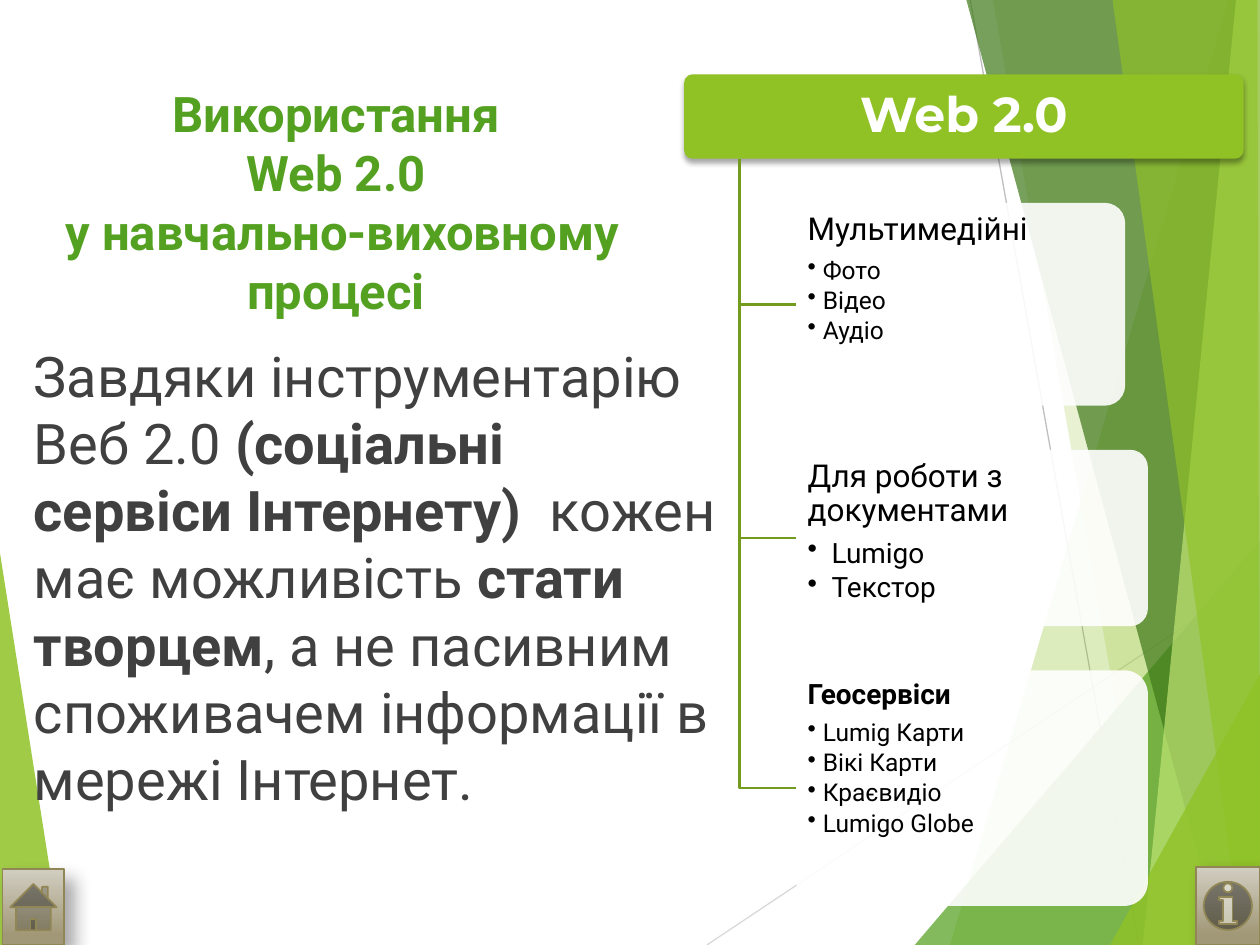
import pptx
import pptx.dml.color
import pptx.enum.shapes
import pptx.enum.text
import pptx.oxml.ns
import pptx.util
from lxml import etree

# The slide is a grid of 10 columns by 7.5 rows
WIDTH, HEIGHT = pptx.util.Inches(10), pptx.util.Inches(7.5)
COLUMNS, ROWS = 10, 7.5

GREEN, DARK_GREEN, FOREST, LIME = "90C226", "54A021", "3F7819", "C0E474"
BRANCH_GREEN, WHITE, BLACK, GREY = "739B1E", "FFFFFF", "000000", "404040"

SHAPES = pptx.enum.shapes.MSO_SHAPE
ANCHORS = pptx.enum.text.MSO_ANCHOR
ALIGNS = pptx.enum.text.PP_ALIGN

# Background bands: outline, colour, opacity in percent
LEFT_BAND = ([(0, 4.39), (0.49, 7.5), (0, 7.5)], GREEN, 85)
RIGHT_BANDS = [
    ([(9.75, 0), (7.54, 7.5), (10, 7.5), (10, 0)], GREEN, 30),
    ([(7.88, 0), (9.19, 7.5), (10, 7.5), (10, 0)], GREEN, 20),
    ([(7.26, 7.5), (10, 4.29), (10, 7.5)], DARK_GREEN, 72),
    ([(7.67, 0), (9.7, 7.5), (10, 7.5), (10, 0)], FOREST, 70),
    ([(9.81, 0), (9.07, 7.5), (10, 7.5), (10, 0)], LIME, 70),
    ([(8.83, 0), (9.86, 7.5), (10, 7.5), (9.98, 0)], GREEN, 65),
    ([(8.81, 7.5), (10, 5.35), (10, 7.5)], GREEN, 80),
]

# Service groups: heading, size, bold, items, item size, indent, width, height
SERVICES = [
    ("Мультимедійні", 18, False, ["Фото", "Відео", "Аудіо"], 14, 0.12, 2.61, 1.61),
    ("Для роботи з документами", 18, False, ["Lumigo", "Текстор"], 16, 0.19, 2.79, 1.4),
    ("Геосервіси", 16, True,
     ["Lumig Карти", "Вікі Карти", "Краєвидіо", "Lumigo Globe"], 14, 0.12, 2.79, 1.87),
]
TRUNK, CARD_LEFT, CARD_GAP = 5.87, 6.32, 0.35


def col(x):
    return round(WIDTH * x / COLUMNS)


def row(y):
    return round(HEIGHT * y / ROWS)


def box(left, top, width, height):
    return col(left), row(top), col(width), row(height)


def color(hex_code):
    return pptx.dml.color.RGBColor.from_string(hex_code)


def add_child(parent, tag, **attributes):
    child = etree.SubElement(parent, pptx.oxml.ns.qn(tag))
    for key, value in attributes.items():
        child.set(key, str(value))
    return child


def paint(shape, fill, opacity=100):
    shape.shadow.inherit = False
    shape.fill.solid()
    shape.fill.fore_color.rgb = color(fill)
    if opacity < 100:
        tint = shape._element.spPr.find(".//" + pptx.oxml.ns.qn("a:srgbClr"))
        add_child(tint, "a:alpha", val=opacity * 1000)
    shape.line.fill.background()


def cast_shadow(shape, blur, distance, angle):
    shape.shadow.inherit = False
    effects = shape._element.spPr.find(pptx.oxml.ns.qn("a:effectLst"))
    shadow = add_child(effects, "a:outerShdw", blurRad=pptx.util.Pt(blur),
                       dist=pptx.util.Pt(distance), dir=angle * 60000, rotWithShape=0)
    add_child(add_child(shadow, "a:srgbClr", val=BLACK), "a:alpha", val=35000)


def add_outline(slide, points, close):
    corners = [(col(x), row(y)) for x, y in points]
    builder = slide.shapes.build_freeform(*corners[0], scale=1.0)
    builder.add_line_segments(corners[1:], close=close)
    return builder.convert_to_shape()


def add_band(slide, points, fill, opacity):
    paint(add_outline(slide, points, True), fill, opacity)


def add_ray(slide, start, end, stroke):
    ray = slide.shapes.add_connector(pptx.enum.shapes.MSO_CONNECTOR.STRAIGHT,
                                     col(start[0]), row(start[1]), col(end[0]), row(end[1]))
    ray.line.color.rgb = color(stroke)
    ray.line.width = pptx.util.Pt(0.75)
    add_child(ray._element.spPr, "a:effectLst")


def add_branch(slide, top, middle):
    branch = add_outline(slide, [(TRUNK, top), (TRUNK, middle), (CARD_LEFT, middle)], False)
    branch.shadow.inherit = False
    branch.fill.background()
    branch.line.color.rgb = color(BRANCH_GREEN)
    branch.line.width = pptx.util.Pt(1.5)


def add_panel(slide, place, fill, opacity=100):
    panel = slide.shapes.add_shape(SHAPES.ROUNDED_RECTANGLE, *box(*place))
    panel.adjustments[0] = 0.1
    paint(panel, fill, opacity)
    return panel


def add_button(slide, kind, place):
    button = slide.shapes.add_shape(kind, *box(*place))
    button.fill.gradient()
    button.fill.gradient_angle = 270
    for stop, shade, position in zip(button.fill.gradient_stops, ("D1CDC0", "A19877"), (0, 0.88)):
        stop.color.rgb = color(shade)
        stop.position = position
    button.line.color.rgb = color("918655")
    button.line.width = pptx.util.Pt(1)
    cast_shadow(button, 10.2, 8, 45)


def add_text_area(slide, place, anchor=ANCHORS.TOP, insets=(0.1, 0.05)):
    frame = slide.shapes.add_textbox(*box(*place)).text_frame
    frame.word_wrap = True
    frame.vertical_anchor = anchor
    frame.margin_left = frame.margin_right = col(insets[0])
    frame.margin_top = frame.margin_bottom = row(insets[1])
    return frame


def add_run(paragraph, words, size, ink, bold=False, font="Roboto"):
    run = paragraph.add_run()
    run.text = words
    run.font.name = font
    run.font.size = pptx.util.Pt(size)
    run.font.bold = bold
    run.font.color.rgb = color(ink)


def space(paragraph, size, share):
    paragraph.line_spacing = 0.9
    paragraph.space_after = pptx.util.Pt(round(size * share, 1))


def add_item(frame, words, size, indent):
    item = frame.add_paragraph()
    item.level = 1
    space(item, size, 0.15)
    settings = item._p.get_or_add_pPr()
    settings.set("marL", str(col(indent)))
    settings.set("indent", str(-col(indent)))
    add_child(settings, "a:buChar", char="•")
    add_run(item, words, size, BLACK)


def add_service(slide, top, service):
    heading, heading_size, bold, items, item_size, indent, width, height = service
    add_panel(slide, (CARD_LEFT, top, width, height), WHITE, 90)
    frame = add_text_area(slide, (CARD_LEFT + 0.05, top + 0.05, width - 0.1, height - 0.1),
                          insets=(0.04, 0.03))
    space(frame.paragraphs[0], heading_size, 0.35)
    add_run(frame.paragraphs[0], heading, heading_size, BLACK, bold)
    for words in items:
        add_item(frame, words, item_size, indent)


def add_title(slide):
    title = add_text_area(slide, (0.02, 0.7, 5.39, 1.88), ANCHORS.BOTTOM).paragraphs[0]
    title.alignment = ALIGNS.CENTER
    lines = ["Використання ", "Web 2.0 ", "у навчально-виховному процесі "]
    for number, words in enumerate(lines):
        if number:
            title.add_line_break()
        add_run(title, words, 28, DARK_GREEN, True)


def add_statement(slide):
    statement = add_text_area(slide, (0.02, 2.66, 5.77, 4.36)).paragraphs[0]
    statement._p.get_or_add_pPr().set("marL", str(col(0.15)))
    for words, bold in [("Завдяки інструментарію Веб 2.0 ", False),
                        ("(соціальні сервіси Інтернету)  ", True),
                        ("кожен має можливість ", False),
                        ("стати творцем", True),
                        (", а не пасивним споживачем інформації в мережі Інтернет.", False)]:
        add_run(statement, words, 32, GREY, bold)


def add_service_tree(slide):
    left, top, width, height = 5.43, 0.59, 4.44, 0.67
    root = add_panel(slide, (left, top, width, height), GREEN)
    cast_shadow(root, 3, 2, 90)
    label = add_text_area(slide, (left + 0.02, top + 0.02, width - 0.04, height - 0.04),
                          ANCHORS.MIDDLE, (0.06, 0.04)).paragraphs[0]
    label.alignment = ALIGNS.CENTER
    space(label, 28, 0.35)
    add_run(label, "Web 2.0", 28, WHITE, True, "Montserrat")
    root_bottom = top + height
    card_top = root_bottom + CARD_GAP
    for service in SERVICES:
        card_height = service[-1]
        add_branch(slide, root_bottom, card_top + card_height / 2)
        add_service(slide, card_top, service)
        card_top += card_height + CARD_GAP


def main():
    deck = pptx.Presentation()
    deck.slide_width, deck.slide_height = WIDTH, HEIGHT
    slide = deck.slides.add_slide(deck.slide_layouts[6])
    # Background
    add_band(slide, *LEFT_BAND)
    add_ray(slide, (5.61, 7.5), (10, 4.57), "D9D9D9")
    add_ray(slide, (7.7, 0), (9.04, 7.5), "BFBFBF")
    for band in RIGHT_BANDS:
        add_band(slide, *band)
    # Text and navigation
    add_title(slide)
    add_statement(slide)
    add_button(slide, SHAPES.ACTION_BUTTON_INFORMATION, (9.49, 6.88, 0.51, 0.62))
    add_button(slide, SHAPES.ACTION_BUTTON_HOME, (0.02, 6.9, 0.49, 0.6))
    # Tree of services
    add_service_tree(slide)
    deck.save("out.pptx")


if __name__ == "__main__":
    main()
